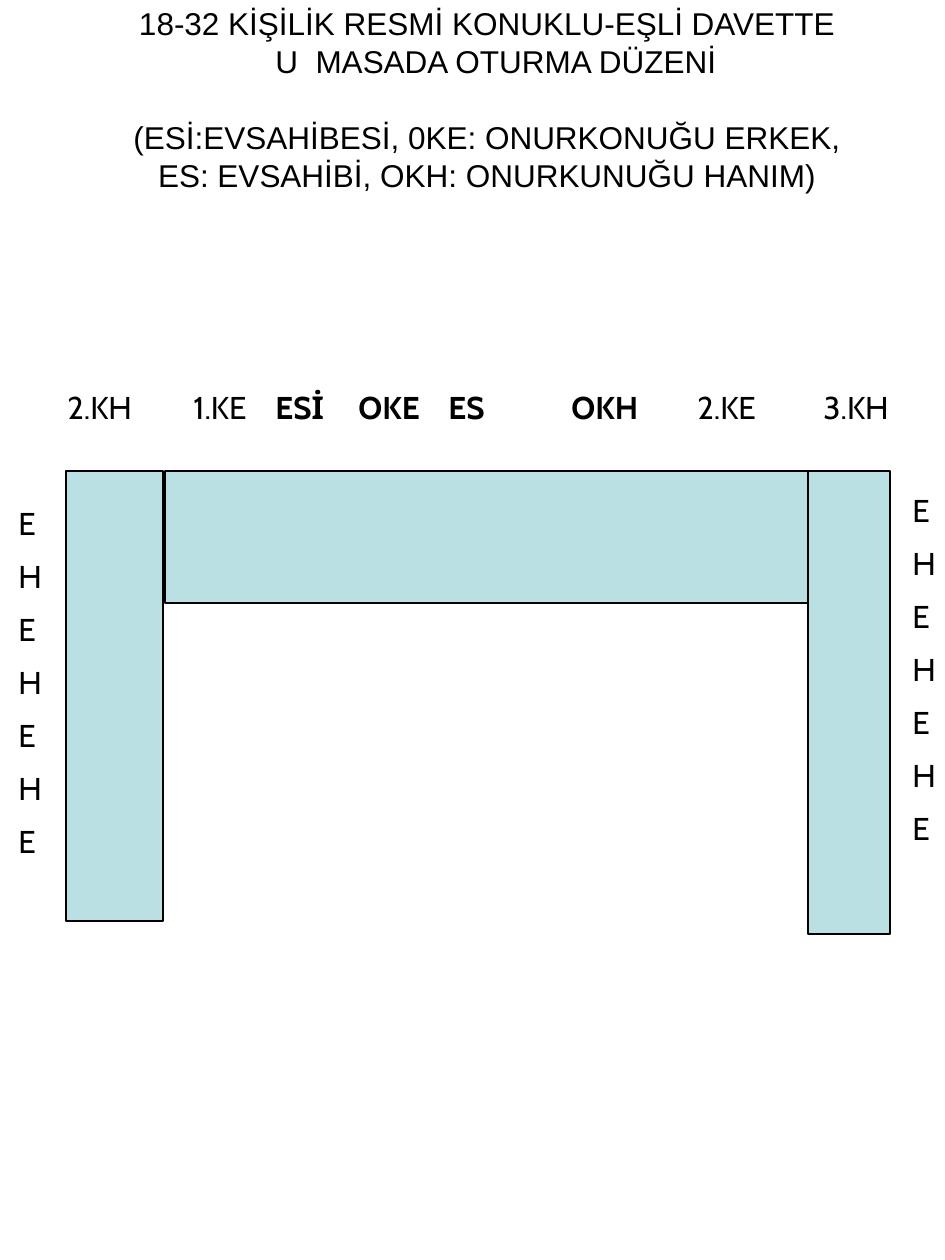
"""Build the seating plan for a U-shaped table at a formal dinner."""
from lxml.etree import SubElement
from pptx import Presentation
from pptx.dml.color import RGBColor
from pptx.enum.shapes import MSO_SHAPE as Shape
from pptx.enum.text import MSO_ANCHOR as Anchor, PP_ALIGN as Align
from pptx.oxml.ns import qn
from pptx.util import Emu, Pt


def px(*lengths):
    return [Emu(round(length * 914400 / 126)) for length in lengths]


def color(hex_string):
    return RGBColor.from_string(hex_string)


presentation = Presentation()
presentation.slide_width, presentation.slide_height = px(945, 1260)
slide = presentation.slides.add_slide(presentation.slide_layouts[6])

TITLE = [
    "18-32 KİŞİLİK RESMİ KONUKLU-EŞLİ DAVETTE ",
    " U  MASADA OTURMA DÜZENİ",
    "(ESİ:EVSAHİBESİ, 0KE: ONURKONUĞU ERKEK, ",
    "ES: EVSAHİBİ, OKH: ONURKUNUĞU HANIM) ",
]
title_frame = slide.shapes.add_textbox(*px(0, -2, 945, 202)).text_frame
title_frame.word_wrap = True
title_frame.vertical_anchor = Anchor.MIDDLE
title_frame.text = "\n".join(TITLE)
for paragraph in title_frame.paragraphs:
    paragraph.alignment = Align.CENTER
    paragraph.font.name, paragraph.font.size = "Arial", Pt(18)
    paragraph.font.color.rgb = color("000000")
    paragraph._p.get_or_add_pPr().set("indent", str(px(38)[0]))
title_frame.paragraphs[2].space_before = Pt(21.7)

for table_part in [(165, 471, 645, 132), (808, 471, 82, 463), (66, 471, 97, 450)]:
    shape = slide.shapes.add_shape(Shape.RECTANGLE, *px(*table_part))
    shape.shadow.inherit = False
    shape.fill.solid()
    shape.fill.fore_color.rgb = color("BBE0E3")
    shape.line.color.rgb = color("000000")
    shape.line.width = Pt(0.75)

for left, top, width in [(6, 498, 38), (900, 485, 59)]:
    side_frame = slide.shapes.add_textbox(*px(left, top, width, 449)).text_frame
    side_frame.word_wrap = True
    side_frame.text = "\n".join("EHEHEHE")
    for index, paragraph in enumerate(side_frame.paragraphs):
        paragraph.font.name, paragraph.font.size = "Cabin", Pt(18)
        paragraph.font.color.rgb = color("000000")
        paragraph.space_before = Pt(8.7 if index else 0)

head_frame = slide.shapes.add_textbox(*px(55, 382, 848, 50)).text_frame
head_frame.word_wrap = False
paragraph = head_frame.paragraphs[0]
paragraph.font.name, paragraph.font.size = "Cabin", Pt(18)
paragraph.font.color.rgb = color("000000")
for text, bold in [("2.KH\t1.KE\t", False), ("ESİ\tOKE\tES\tOKH", True), ("\t2.KE\t3.KH", False)]:
    run = paragraph.add_run()
    run.text, run.font.bold = text, bold
properties = paragraph._p.get_or_add_pPr()
tab_list = properties.makeelement(qn("a:tabLst"))
properties.insert(0, tab_list)
for position in px(126, 208, 291, 381, 504, 630, 756):
    SubElement(tab_list, qn("a:tab"), pos=str(position), algn="l")

presentation.save("out.pptx")
